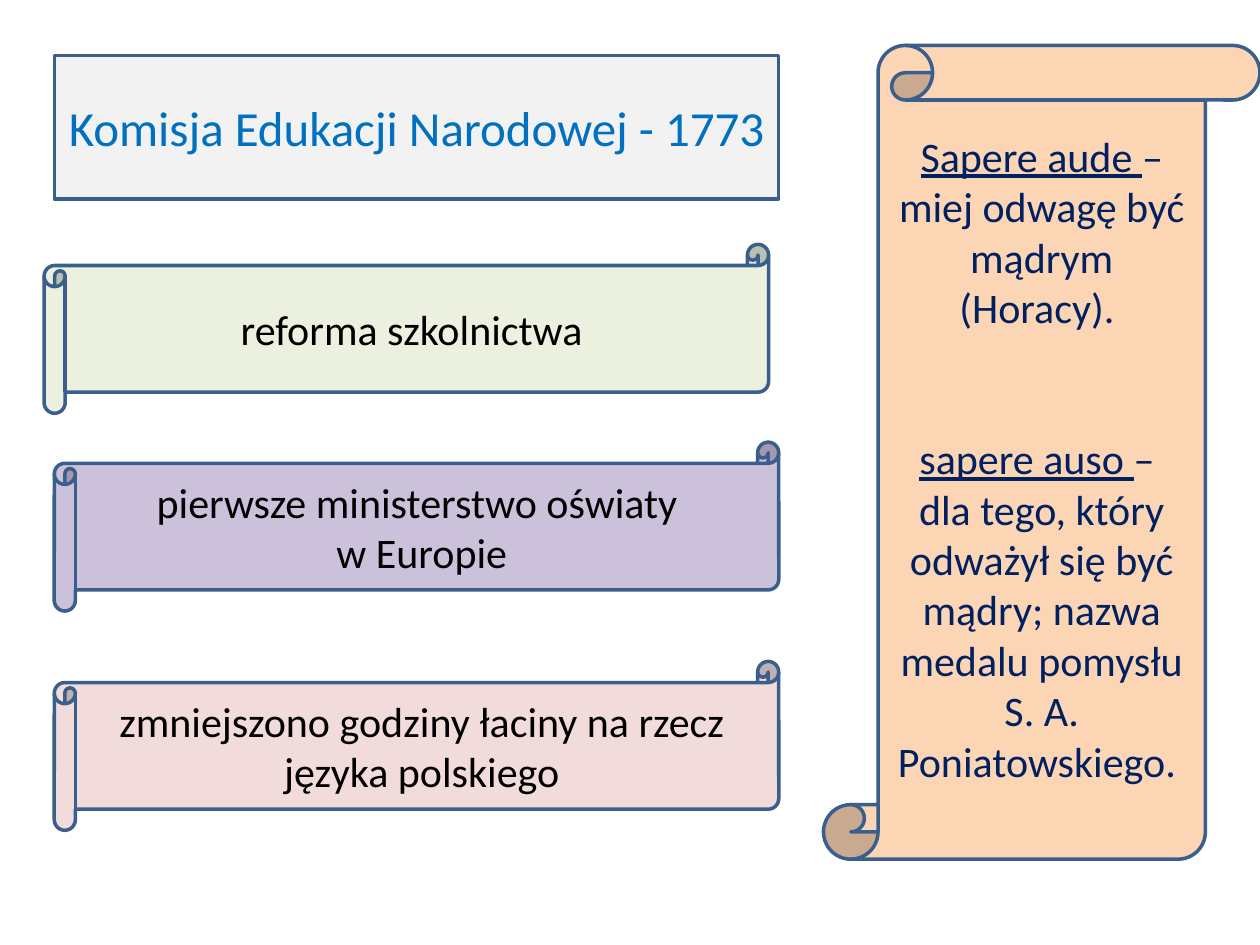
from dataclasses import dataclass

from lxml import etree
from pptx import Presentation
from pptx.dml.color import RGBColor
from pptx.enum import shapes, text
from pptx.oxml.ns import qn
from pptx.util import Pt

FONT = "Calibri"
OUTLINE = "3A5F8C"
TITLE_ONLY = 5


@dataclass
class Banner:
    left: float
    top: float
    fill: str
    lines: list[str]


@dataclass
class Motto:
    latin: str
    meaning: list[str]
    space_before: float


BANNERS = [
    Banner(25.2, 139.7, "EBF1DE", ["reforma szkolnictwa"]),
    Banner(31, 252.7, "CCC1DA", ["pierwsze ministerstwo oświaty ", "w Europie"]),
    Banner(31, 378, "F2DCDB",
           ["zmniejszono godziny łaciny na rzecz języka polskiego"]),
]
MOTTOES = [
    Motto("Sapere aude ", ["– miej odwagę być mądrym (Horacy). "], 0),
    Motto("sapere auso ",
          ["– ", "dla tego, który odważył się być mądry; nazwa medalu "
                 "pomysłu S. A. Poniatowskiego. "], 57.6),
]


def rgb(value: str) -> RGBColor:
    return RGBColor.from_string(value)


def paint(sp, fill: str) -> None:
    """Fill and outline a shape and centre its text vertically."""
    sp.fill.solid()
    sp.fill.fore_color.rgb = rgb(fill)
    sp.line.color.rgb = rgb(OUTLINE)
    sp.line.width = Pt(2)
    sp.shadow.inherit = False
    tf = sp.text_frame
    tf.word_wrap = True
    tf.auto_size = text.MSO_AUTO_SIZE.NONE
    tf.vertical_anchor = text.MSO_ANCHOR.MIDDLE


def format_text(tf, size: float, color: str) -> None:
    for p in tf.paragraphs:
        p.alignment = text.PP_ALIGN.CENTER
        for r in p.runs:
            r.font.name = FONT
            r.font.size = Pt(size)
            r.font.color.rgb = rgb(color)


def add_title(s, title: str) -> None:
    sp = s.shapes.title
    sp.left, sp.top, sp.width, sp.height = Pt(31), Pt(31.7), Pt(414), Pt(82)
    # Give the placeholder a bevelled frame
    geom = etree.SubElement(sp.element.spPr, qn("a:prstGeom"), prst="bevel")
    etree.SubElement(geom, qn("a:avLst"))
    paint(sp, "F2F2F2")
    sp.text_frame.text = title
    format_text(sp.text_frame, 28, "0070C0")


def add_banner(s, banner: Banner) -> None:
    sp = s.shapes.add_shape(shapes.MSO_SHAPE.HORIZONTAL_SCROLL,
                            Pt(banner.left), Pt(banner.top), Pt(414), Pt(96.5))
    paint(sp, banner.fill)
    sp.text_frame.text = "\n".join(banner.lines)
    format_text(sp.text_frame, 24, "000000")


def add_motto_scroll(s, mottoes: list[Motto]) -> None:
    sp = s.shapes.add_shape(shapes.MSO_SHAPE.VERTICAL_SCROLL,
                            Pt(470.6), Pt(26), Pt(249.4), Pt(465))
    paint(sp, "FCD5B5")
    tf = sp.text_frame
    tf.margin_bottom = Pt(12.8)
    for i, motto in enumerate(mottoes):
        p = tf.add_paragraph() if i else tf.paragraphs[0]
        p.space_before = Pt(motto.space_before)
        r = p.add_run()
        r.text = motto.latin
        r.font.underline = True
        for j, line in enumerate(motto.meaning):
            if j:
                p.add_line_break()
            p.add_run().text = line
    format_text(tf, 24, "002060")


def main() -> None:
    prs = Presentation()
    prs.slide_width, prs.slide_height = Pt(720), Pt(540)
    s = prs.slides.add_slide(prs.slide_layouts[TITLE_ONLY])

    # Heading and reforms on the left
    add_title(s, "Komisja Edukacji Narodowej - 1773")
    for banner in BANNERS:
        add_banner(s, banner)

    # Latin mottoes on the right
    add_motto_scroll(s, MOTTOES)
    prs.save("out.pptx")


if __name__ == "__main__":
    main()
